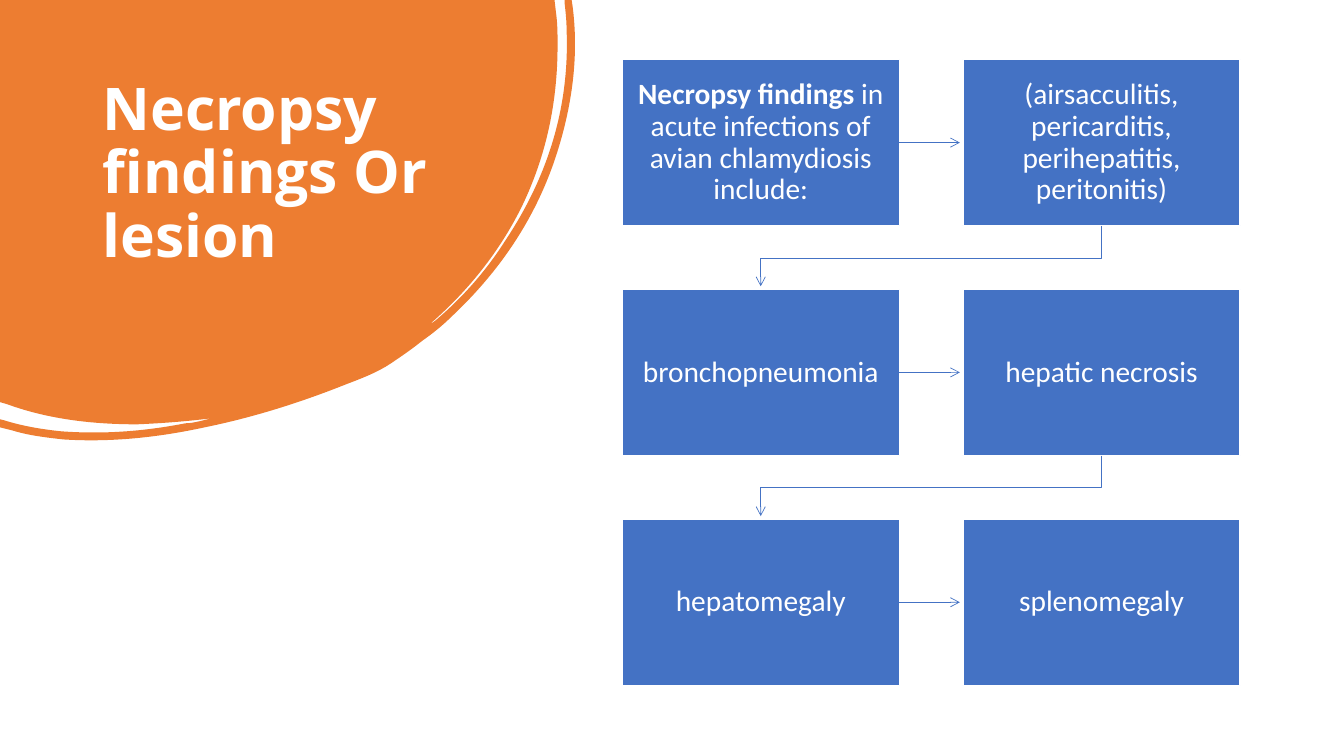
"""Build a slide with an orange title blob beside a six-step findings flow."""
from lxml.etree import SubElement
from pptx import Presentation
from pptx.dml.color import RGBColor
from pptx.enum.shapes import MSO_SHAPE
from pptx.enum.text import MSO_ANCHOR, PP_ALIGN
from pptx.oxml.ns import qn
from pptx.util import Inches, Pt

ORANGE = RGBColor(0xED, 0x7D, 0x31)
BLUE = RGBColor(0x44, 0x72, 0xC4)
WHITE = RGBColor(0xFF, 0xFF, 0xFF)

TITLE = "Necropsy findings Or lesion"
STEPS = [
    [("Necropsy findings", True),
     (" in acute infections of avian chlamydiosis include:", False)],
    [("(airsacculitis, pericarditis, perihepatitis, peritonitis)", False)],
    [("bronchopneumonia", False)],
    [("hepatic necrosis", False)],
    [("hepatomegaly", False)],
    [("splenomegaly", False)],
]
BLOB = [
    [(0, 0)], [(5.5, 0)], [(5.52, 0.17)],
    [(5.53, 0.26), (5.53, 0.36), (5.53, 0.45)],
    [(5.53, 1.01), (5.42, 1.54), (5.18, 2.04)],
    [(4.96, 2.49), (4.65, 2.88), (4.27, 3.21)],
    [(4.29, 3.21), (4.3, 3.19), (4.32, 3.18)],
    [(4.59, 2.95), (4.82, 2.69), (5.01, 2.39)],
    [(5.43, 1.76), (5.65, 1.07), (5.62, 0.3)],
    [(5.62, 0.21), (5.61, 0.12), (5.6, 0.03)],
    [(5.6, 0)], [(5.67, 0)], [(5.68, 0.07)],
    [(5.74, 0.54), (5.68, 1.02), (5.53, 1.5)],
    [(5.33, 2.14), (4.97, 2.68), (4.48, 3.14)],
    [(4.39, 3.23), (4.29, 3.31), (4.19, 3.38)],
    [(4.09, 3.46), (3.99, 3.53), (3.87, 3.61)],
    [(3.75, 3.69), (3.6, 3.75), (3.44, 3.81)],
    [(2.99, 3.99), (2.52, 4.14), (2.03, 4.24)],
    [(1.57, 4.34), (1.1, 4.39), (0.63, 4.36)],
    [(0.45, 4.34), (0.28, 4.32), (0.12, 4.27)],
    [(0, 4.24)], [(0, 4.16)], [(0.04, 4.17)],
    [(0.23, 4.23), (0.42, 4.26), (0.61, 4.28)],
    [(1.03, 4.31), (1.43, 4.28), (1.84, 4.2)],
    [(1.89, 4.2), (1.93, 4.19), (1.98, 4.18)],
    [(2.02, 4.17), (2.06, 4.16), (2.1, 4.15)],
    [(1.86, 4.18), (1.61, 4.2), (1.36, 4.21)],
    [(0.92, 4.21), (0.48, 4.16), (0.07, 4.01)],
    [(0, 3.99)],
]
COLUMNS = 2
GRID_LEFT, GRID_TOP = 6.17, 0.59
COLUMN_PITCH, ROW_PITCH = 3.38, 2.28
BOX_WIDTH, BOX_HEIGHT = 2.75, 1.65
ARROW_LENGTH, ARROW_BAND, ELBOW_DROP = 0.6, 0.1, 0.32


def add_outline(page, points, close):
    scaled = [(Inches(x), Inches(y)) for x, y in points]
    builder = page.shapes.build_freeform(*scaled[0], scale=1.0)
    builder.add_line_segments(scaled[1:], close=close)
    shape = builder.convert_to_shape()
    shape.shadow.inherit = False
    return shape


def add_blob(page):
    blob = add_outline(page, [segment[-1] for segment in BLOB], close=True)
    blob.fill.solid()
    blob.fill.fore_color.rgb = ORANGE
    blob.line.fill.background()
    edges = list(blob._element.iter(qn("a:lnTo")))
    for edge, segment in zip(edges, BLOB[1:]):
        if len(segment) == 3:
            curve = edge.getparent().makeelement(qn("a:cubicBezTo"))
            for x, y in segment:
                SubElement(curve, qn("a:pt"), x=str(Inches(x)), y=str(Inches(y)))
            edge.getparent().replace(edge, curve)


def add_span(para, text, font, size, bold):
    span = para.add_run()
    span.text = text
    span.font.name = font
    span.font.size = Pt(size)
    span.font.bold = bold
    span.font.color.rgb = WHITE


def add_title(page):
    box = page.shapes.add_textbox(Inches(0.92), Inches(0.74), Inches(3.52), Inches(2.22))
    box.text_frame.word_wrap = True
    para = box.text_frame.paragraphs[0]
    para.line_spacing = 0.9
    add_span(para, TITLE, "Open Sans", 42, True)


def add_step(page, left, top, spans):
    box = page.shapes.add_shape(MSO_SHAPE.RECTANGLE, Inches(left), Inches(top),
                                Inches(BOX_WIDTH), Inches(BOX_HEIGHT))
    box.shadow.inherit = False
    box.fill.solid()
    box.fill.fore_color.rgb = BLUE
    box.line.color.rgb = WHITE
    box.line.width = Pt(1)
    frame = box.text_frame
    frame.word_wrap = True
    frame.vertical_anchor = MSO_ANCHOR.MIDDLE
    frame.margin_left = frame.margin_right = Inches(0.13)
    frame.margin_top = frame.margin_bottom = Inches(0.14)
    para = frame.paragraphs[0]
    para.alignment = PP_ALIGN.CENTER
    para.line_spacing = 0.9
    for text, bold in spans:
        add_span(para, text, "Calibri", 21, bold)


def add_arrow(page, points):
    arrow = add_outline(page, points, close=False)
    arrow.fill.background()
    arrow.line.color.rgb = BLUE
    arrow.line.width = Pt(0.5)
    SubElement(arrow._element.spPr.find(qn("a:ln")), qn("a:tailEnd"), type="arrow")
    return arrow


def add_straight_arrow(page, left, top):
    start, middle = left + BOX_WIDTH, top + BOX_HEIGHT / 2
    arrow = add_arrow(page, [(start, middle), (start + ARROW_LENGTH, middle)])
    arrow.top = Inches(middle - ARROW_BAND / 2)
    arrow.height = Inches(ARROW_BAND)
    for outline in arrow._element.iter(qn("a:path")):
        outline.set("h", str(Inches(ARROW_BAND)))
        for point in outline.iter(qn("a:pt")):
            point.set("y", str(Inches(ARROW_BAND / 2)))


def add_elbow_arrow(page, left, top):
    start_x, start_y = left + BOX_WIDTH / 2, top + BOX_HEIGHT
    end_x, bend_y = start_x - COLUMN_PITCH, start_y + ELBOW_DROP
    add_arrow(page, [(start_x, start_y), (start_x, bend_y), (end_x, bend_y),
                     (end_x, start_y + ARROW_LENGTH)])


def main():
    deck = Presentation()
    deck.slide_width, deck.slide_height = Inches(13.33), Inches(7.5)
    page = deck.slides.add_slide(deck.slide_layouts[6])
    add_blob(page)
    add_title(page)
    for index, spans in enumerate(STEPS):
        row, column = divmod(index, COLUMNS)
        left = GRID_LEFT + column * COLUMN_PITCH
        top = GRID_TOP + row * ROW_PITCH
        add_step(page, left, top, spans)
        if index == len(STEPS) - 1:
            continue
        if column < COLUMNS - 1:
            add_straight_arrow(page, left, top)
        else:
            add_elbow_arrow(page, left, top)
    deck.save("out.pptx")


if __name__ == "__main__":
    main()
